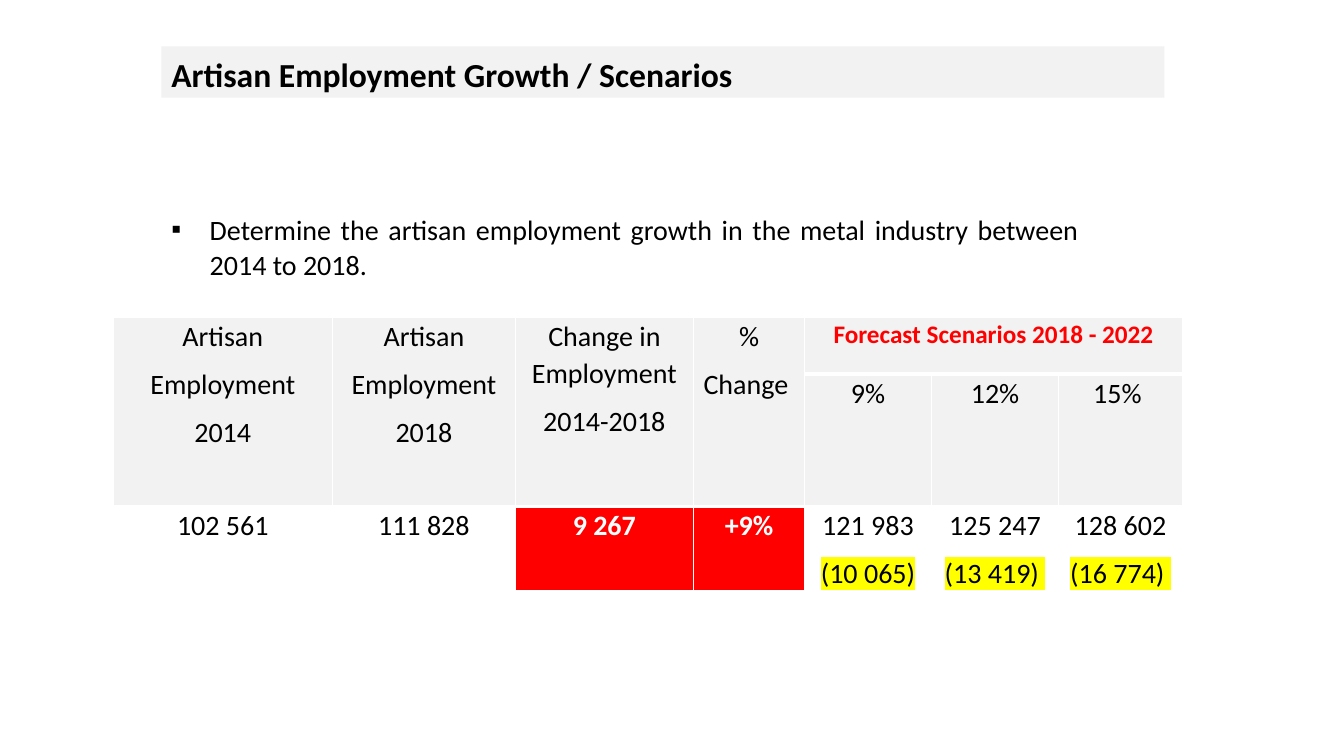
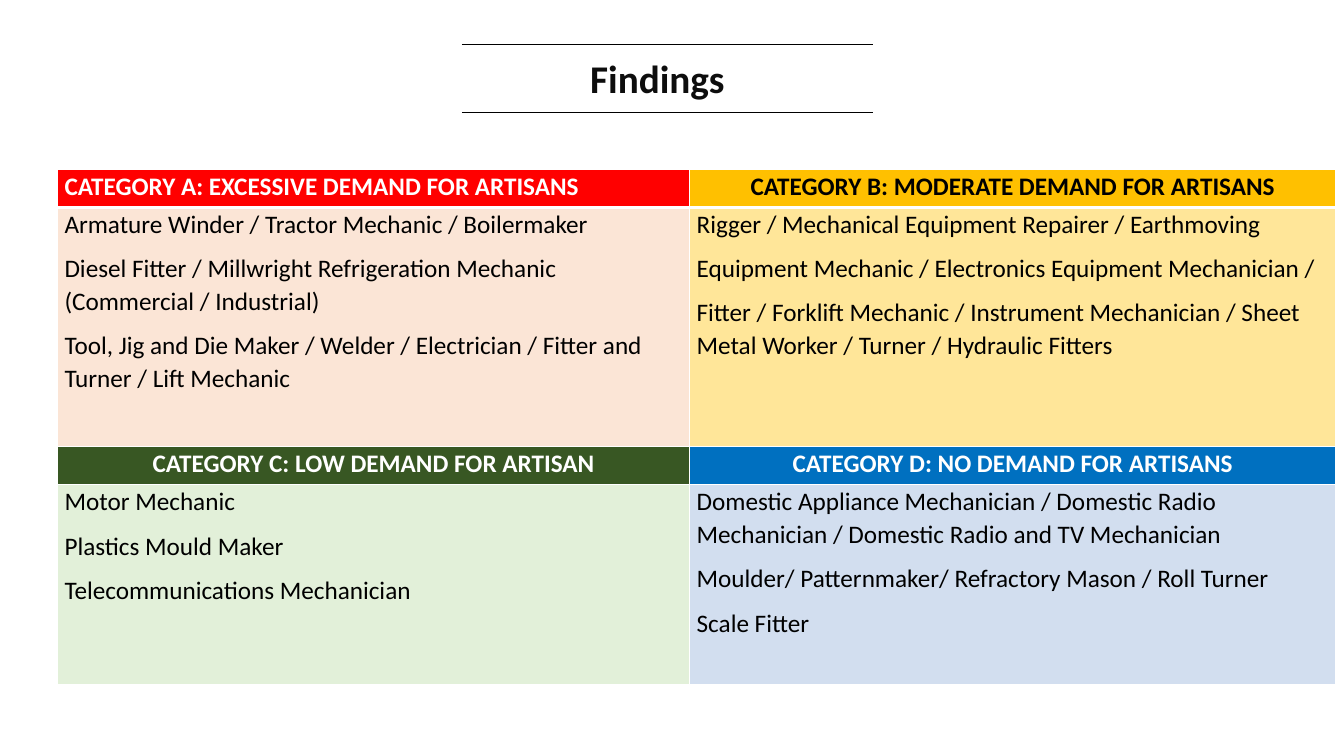
"""Build two slides on artisan employment growth and demand findings."""

from dataclasses import dataclass
from typing import NamedTuple

from lxml.etree import SubElement
from pptx import Presentation
from pptx.dml.color import RGBColor
from pptx.enum.shapes import MSO_CONNECTOR
from pptx.enum.text import MSO_ANCHOR, MSO_AUTO_SIZE, PP_ALIGN
from pptx.oxml.ns import qn
from pptx.util import Inches, Pt

FONT = "Calibri"
UNIT = Inches(0.1)
GRID_COLUMNS, GRID_ROWS = 133.3, 75
LINE_SPACING, SPACE_AFTER = 1.07, 8
COLORS = {
    "black": "000000", "white": "FFFFFF", "ink": "0D0D0D", "grey": "F2F2F2",
    "red": "FF0000", "amber": "FFC000", "green": "385723", "blue": "0070C0",
    "pale_red": "FBE5D6", "pale_amber": "FFE699", "pale_green": "E2F0D9",
    "pale_blue": "D2DEEF", "yellow": "FFFF00",
}


class Area(NamedTuple):
    column: float
    row: float
    width: float
    height: float


@dataclass
class TextStyle:
    size: float
    color: str = "black"
    bold: bool = False
    align: PP_ALIGN = PP_ALIGN.LEFT
    spacing: float = LINE_SPACING
    after: float = SPACE_AFTER


@dataclass
class Entry:
    row: int
    column: int
    lines: list[str]
    fill: str
    style: TextStyle
    row_span: int = 1
    column_span: int = 1
    mark: str = ""


@dataclass
class Grid:
    column: float
    row: float
    widths: list[float]
    heights: list[float]
    heavy_rows: int
    entries: list[Entry]


def grid(count: float) -> int:
    return round(count * UNIT)


def rgb(name: str) -> RGBColor:
    return RGBColor.from_string(COLORS[name])


def write(frame, lines: list[str], style: TextStyle) -> None:
    frame.text = "\n".join(lines)
    for para in frame.paragraphs:
        para.alignment = style.align
        para.line_spacing = style.spacing
        para.space_before, para.space_after = Pt(0), Pt(style.after)
        for span in para.runs:
            span.font.name, span.font.size = FONT, Pt(style.size)
            span.font.bold = style.bold
            span.font.color.rgb = rgb(style.color)


def fill_placeholder(box, area: Area, lines: list[str], style: TextStyle, anchor: MSO_ANCHOR) -> None:
    box.left, box.top, box.width, box.height = map(grid, area)
    frame = box.text_frame
    frame.word_wrap, frame.auto_size = True, MSO_AUTO_SIZE.NONE
    frame.vertical_anchor = anchor
    write(frame, lines, style)


def add_title(page, text: str, area: Area, fill: str, style: TextStyle, anchor: MSO_ANCHOR) -> None:
    title = page.shapes.title
    fill_placeholder(title, area, [text], style, anchor)
    title.fill.solid()
    title.fill.fore_color.rgb = rgb(fill)


def add_bullets(para, indent: float) -> None:
    properties = para._p.get_or_add_pPr()
    properties.set("marL", str(grid(indent)))
    properties.set("indent", str(-grid(indent)))
    SubElement(properties, qn("a:buFont")).set("typeface", "Arial")
    SubElement(properties, qn("a:buChar")).set("char", "▪")


def add_rule(page, column: float, row: float, width: float) -> None:
    rule = page.shapes.add_connector(
        MSO_CONNECTOR.STRAIGHT, grid(column), grid(row), grid(column + width), grid(row))
    rule.line.color.rgb, rule.line.width = rgb("black"), Pt(0.5)
    SubElement(rule._element.spPr, qn("a:effectLst"))


def add_borders(cell, bottom: float) -> None:
    properties = cell._tc.get_or_add_tcPr()
    for position, (side, width) in enumerate(zip("LRTB", (1, 1, 1, bottom))):
        line = SubElement(properties, qn(f"a:ln{side}"))
        line.set("w", str(Pt(width)))
        SubElement(SubElement(line, qn("a:solidFill")), qn("a:srgbClr")).set("val", COLORS["white"])
        properties.insert(position, line)


def highlight(span, color: str) -> None:
    properties = span._r.get_or_add_rPr()
    mark = SubElement(properties, qn("a:highlight"))
    SubElement(mark, qn("a:srgbClr")).set("val", COLORS[color])
    properties.find(qn("a:latin")).addprevious(mark)


def add_grid(page, spec: Grid) -> None:
    table = page.shapes.add_table(
        len(spec.heights), len(spec.widths), grid(spec.column), grid(spec.row),
        grid(sum(spec.widths)), grid(sum(spec.heights))).table
    table.first_row = table.horz_banding = False
    for column, width in zip(table.columns, spec.widths):
        column.width = grid(width)
    for index, (row, height) in enumerate(zip(table.rows, spec.heights)):
        row.height = grid(height)
        for cell in row.cells:
            add_borders(cell, 3 if index < spec.heavy_rows else 1)
    for entry in spec.entries:
        cell = table.cell(entry.row, entry.column)
        if entry.row_span * entry.column_span > 1:
            cell.merge(table.cell(
                entry.row + entry.row_span - 1, entry.column + entry.column_span - 1))
        cell.margin_left = cell.margin_right = grid(0.7)
        cell.margin_top = cell.margin_bottom = 0
        cell.fill.solid()
        cell.fill.fore_color.rgb = rgb(entry.fill)
        write(cell.text_frame, entry.lines, entry.style)
        if entry.mark:
            highlight(cell.text_frame.paragraphs[-1].runs[0], entry.mark)


def growth_entries() -> list[Entry]:
    plain = TextStyle(20, align=PP_ALIGN.CENTER)
    strong = TextStyle(20, "white", True, PP_ALIGN.CENTER)
    heading = TextStyle(18, "red", True, PP_ALIGN.CENTER)
    employment = [
        (["Artisan", "Employment", "2014"], "102 561", "white", plain),
        (["Artisan", "Employment", "2018"], "111 828", "white", plain),
        (["Change in Employment", "2014-2018"], "9 267", "red", strong),
        (["%", "Change "], "+9%", "red", strong),
    ]
    scenarios = [
        ("9%", "121 983", "(10 065)"),
        ("12%", "125 247", "(13 419) "),
        ("15% ", "128 602", "(16 774) "),
    ]
    first = len(employment)
    entries = [Entry(0, first, ["Forecast Scenarios 2018 - 2022"], "grey", heading,
                     column_span=len(scenarios))]
    for column, (header, value, fill, style) in enumerate(employment):
        entries += [Entry(0, column, header, "grey", plain, row_span=2),
                    Entry(2, column, [value], fill, style)]
    for column, (rate, total, change) in enumerate(scenarios, first):
        entries += [Entry(1, column, [rate], "grey", plain),
                    Entry(2, column, [total, change], "white", plain, mark="yellow")]
    return entries


def finding_entries() -> list[Entry]:
    left, center = PP_ALIGN.LEFT, PP_ALIGN.CENTER
    categories = [
        ("CATEGORY A: EXCESSIVE DEMAND FOR ARTISANS", left, "white", "red", "pale_red", [
            "Armature Winder / Tractor Mechanic / Boilermaker",
            "Diesel Fitter / Millwright Refrigeration Mechanic (Commercial / Industrial)",
            "Tool, Jig and Die Maker / Welder / Electrician / Fitter and Turner / Lift Mechanic"]),
        ("CATEGORY B: MODERATE DEMAND FOR ARTISANS", center, "black", "amber", "pale_amber", [
            "Rigger / Mechanical Equipment Repairer / Earthmoving",
            "Equipment Mechanic / Electronics Equipment Mechanician /",
            "Fitter / Forklift Mechanic / Instrument Mechanician / Sheet Metal Worker"
            " / Turner / Hydraulic Fitters"]),
        ("CATEGORY C: LOW DEMAND FOR ARTISAN", center, "white", "green", "pale_green", [
            "Motor Mechanic", "Plastics Mould Maker", "Telecommunications Mechanician"]),
        ("CATEGORY D: NO DEMAND FOR ARTISANS", center, "white", "blue", "pale_blue", [
            "Domestic Appliance Mechanician / Domestic Radio Mechanician"
            " / Domestic Radio and TV Mechanician",
            "Moulder/ Patternmaker/ Refractory Mason / Roll Turner",
            "Scale Fitter"]),
    ]
    entries = []
    for index, (name, align, color, fill, pale, trades) in enumerate(categories):
        band, column = divmod(index, 2)
        entries += [Entry(2 * band, column, [name], fill, TextStyle(18, color, True, align)),
                    Entry(2 * band + 1, column, trades, pale, TextStyle(18))]
    return entries


def build_growth(deck) -> None:
    page = deck.slides.add_slide(deck.slide_layouts[1])
    add_title(page, "Artisan Employment Growth / Scenarios", Area(16, 4.6, 99.5, 5.1),
              "grey", TextStyle(24, bold=True), MSO_ANCHOR.TOP)
    body = page.placeholders[1]
    fill_placeholder(
        body, Area(16, 20.3, 92, 8.1),
        ["Determine the artisan employment growth in the metal industry between 2014 to 2018."],
        TextStyle(20, align=PP_ALIGN.JUSTIFY, after=0), MSO_ANCHOR.TOP)
    add_bullets(body.text_frame.paragraphs[0], 3.8)
    add_grid(page, Grid(11.2, 31.5, [21.8, 18.1, 17.7, 11, 12.6, 12.6, 12.3],
                        [5.6, 12.9, 8.2], 2, growth_entries()))


def build_findings(deck) -> None:
    page = deck.slides.add_slide(deck.slide_layouts[5])
    for row in (4.4, 11.1):
        add_rule(page, 45.8, row, 40.8)
    add_title(page, "Findings", Area(22.9, 5.5, 84.6, 4.5), "white",
              TextStyle(28, "ink", True, PP_ALIGN.CENTER, 1, 0), MSO_ANCHOR.MIDDLE)
    add_grid(page, Grid(5.7, 16.8, [62.7, 64.1], [3.8, 23.7, 3.8, 19.8], 1, finding_entries()))


def main() -> None:
    deck = Presentation()
    deck.slide_width, deck.slide_height = grid(GRID_COLUMNS), grid(GRID_ROWS)
    build_growth(deck)
    build_findings(deck)
    deck.save("out.pptx")


if __name__ == "__main__":
    main()
